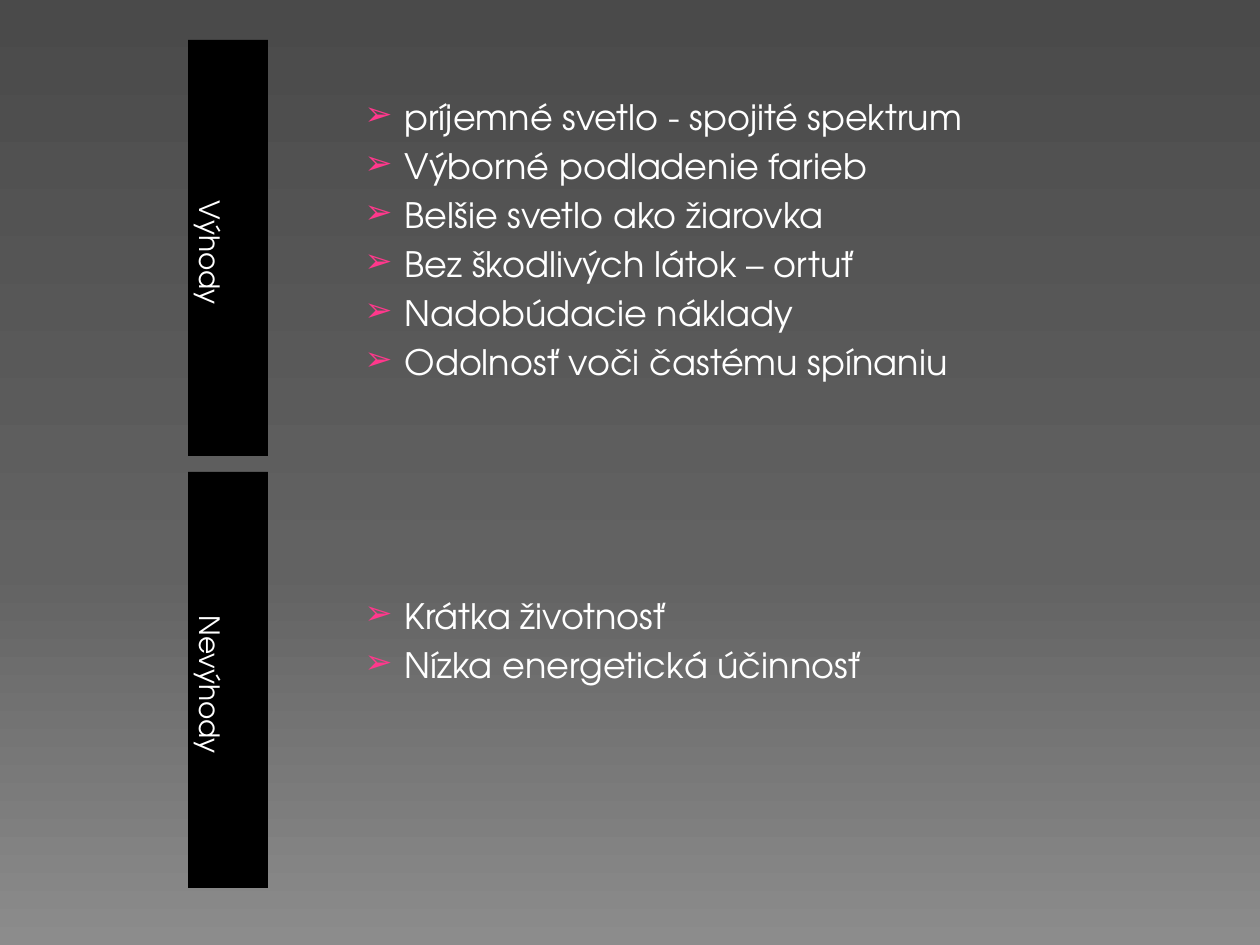
from copy import deepcopy

from lxml import etree
from pptx import Presentation
from pptx import util as u
from pptx.dml.color import RGBColor
from pptx.enum import shapes, text as t
from pptx.oxml import ns

PX = 914400 / 126
FONT = "TeX Gyre Adventor"
WHITE, BLACK, PINK = "FFFFFF", "000000", "FF388C"
STOPS = [(0, "4A4A4A"), (0.6, "626262"), (1, "8C8C8C")]
TOP, STEP, HIGH = 40, 432, 416
GROUPS = [
    ("Výhody", 48, [
        "príjemné svetlo - spojité spektrum",
        "Výborné podladenie farieb",
        "Belšie svetlo ako žiarovka",
        "Bez škodlivých látok – ortuť",
        "Nadobúdacie náklady",
        "Odolnosť voči častému spínaniu",
    ]),
    ("Nevýhody", 115, [
        "Krátka životnosť",
        "Nízka energetická účinnosť",
    ]),
]


def px(n):
    return u.Emu(round(n * PX))


def write(para, words, size):
    """Add one white run to a paragraph."""
    run = para.add_run()
    run.text = words
    run.font.name = FONT
    run.font.size = u.Pt(size)
    run.font.color.rgb = RGBColor.from_string(WHITE)


prs = Presentation()
prs.slide_width, prs.slide_height = px(1260), px(945)
slide = prs.slides.add_slide(prs.slide_layouts[3])
title = slide.shapes.title.element
title.getparent().remove(title)

# Background: three grey stops from top to bottom
back = slide.background.fill
back.gradient()
back.gradient_angle = 270
stops = slide.background.element.find(".//" + ns.qn("a:gsLst"))
stops.append(deepcopy(stops[0]))
for stop, (pos, tone) in zip(back.gradient_stops, STOPS):
    stop.position = pos
    stop.color.rgb = RGBColor.from_string(tone)

boxes = list(slide.placeholders)
for row, (name, inset, items) in enumerate(GROUPS):
    top = px(TOP + row * STEP)

    # Black bar with its name turned to read downwards
    bar = slide.shapes.add_shape(
        shapes.MSO_SHAPE.RECTANGLE, px(188), top, px(80), px(HIGH))
    bar.shadow.inherit = False
    bar.fill.solid()
    bar.fill.fore_color.rgb = RGBColor.from_string(BLACK)
    bar.line.fill.background()
    frame = bar.text_frame
    frame.word_wrap = True
    frame.vertical_anchor = t.MSO_ANCHOR.BOTTOM
    frame.margin_bottom = px(3)
    bar.element.find(".//" + ns.qn("a:bodyPr")).set("vert", "vert")
    para = frame.paragraphs[0]
    para.alignment = t.PP_ALIGN.CENTER
    write(para, name, 16)

    # Bulleted points
    box = boxes[row]
    box.left, box.top = px(278), top
    box.width, box.height = px(945), px(HIGH)
    frame = box.text_frame
    frame.word_wrap = True
    frame.auto_size = t.MSO_AUTO_SIZE.NONE
    frame.vertical_anchor = t.MSO_ANCHOR.TOP
    frame.margin_top = px(inset)
    for i, item in enumerate(items):
        para = frame.add_paragraph() if i else frame.paragraphs[0]
        para.level = 1
        para.line_spacing = u.Pt(28)
        para.space_before = u.Pt(0)
        write(para, item, 20)
        props = para._p.get_or_add_pPr()
        props.set("marL", str(px(114)))
        props.set("indent", str(px(-40)))
        tint = etree.SubElement(props, ns.qn("a:buClr"))
        etree.SubElement(tint, ns.qn("a:srgbClr"), val=PINK)
        etree.SubElement(props, ns.qn("a:buSzPct"), val="95000")
        etree.SubElement(props, ns.qn("a:buFont"), typeface=FONT)
        etree.SubElement(props, ns.qn("a:buChar"), char="➢")

prs.save("out.pptx")
